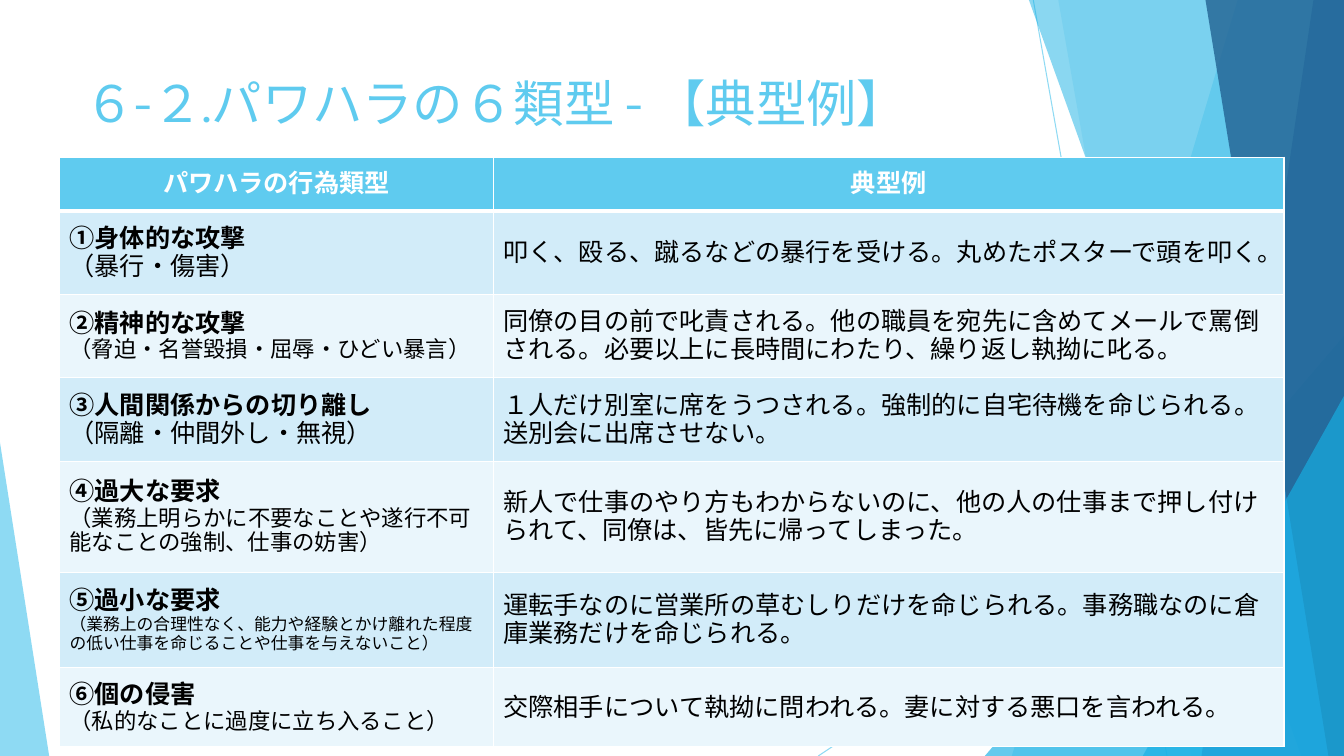
from pptx import Presentation
from pptx.dml.color import RGBColor as RGB
from pptx.enum.shapes import MSO_CONNECTOR as LINK, MSO_SHAPE as KIND
from pptx.enum.text import MSO_ANCHOR as ANCHOR, PP_ALIGN as ALIGN
from pptx.oxml.ns import qn
from pptx.util import Cm, Pt
from lxml.etree import SubElement as Sub

SKY = RGB(0x5F, 0xCB, 0xEF)
AZURE = RGB(0x17, 0xB0, 0xE4)
BLUE = RGB(0x2E, 0x83, 0xC3)
NAVY = RGB(0x22, 0x62, 0x92)
PALE = RGB(0xD2, 0xEC, 0xF9)
MIST = RGB(0xEA, 0xF6, 0xFC)
WHITE = RGB(0xFF, 0xFF, 0xFF)
BLACK = RGB(0, 0, 0)

WIDE, HIGH = 33.87, 19.05
COLS = (10.93, 19.93)
TALL = (1.36, 2.1, 2.1, 2.1, 2.8, 2.41, 1.99)

HEADS = ("パワハラの行為類型", "典型例")
CASES = (
    ("①身体的な攻撃", "（暴行・傷害）", 18,
     "叩く、殴る、蹴るなどの暴行を受ける。丸めたポスターで頭を叩く。"),
    ("②精神的な攻撃", "（脅迫・名誉毀損・屈辱・ひどい暴言）", 16,
     "同僚の目の前で叱責される。他の職員を宛先に含めてメールで罵倒される。必要以上に長時間にわたり、繰り返し執拗に叱る。"),
    ("③人間関係からの切り離し", "（隔離・仲間外し・無視）", 18,
     "１人だけ別室に席をうつされる。強制的に自宅待機を命じられる。送別会に出席させない。"),
    ("④過大な要求", "（業務上明らかに不要なことや遂行不可能なことの強制、仕事の妨害）", 16,
     "新人で仕事のやり方もわからないのに、他の人の仕事まで押し付けられて、同僚は、皆先に帰ってしまった。"),
    ("⑤過小な要求", "（業務上の合理性なく、能力や経験とかけ離れた程度の低い仕事を命じることや仕事を与えないこと）", 12,
     "運転手なのに営業所の草むしりだけを命じられる。事務職なのに倉庫業務だけを命じられる。"),
    ("⑥個の侵害", "（私的なことに過度に立ち入ること）", 16,
     "交際相手について執拗に問われる。妻に対する悪口を言われる。"),
)


def style(font, tint, form):
    for key, value in form.items():
        setattr(font, key, value)
    font.color.rgb = tint


def fade(shape, alpha):
    tint = next(shape._element.spPr.iter(qn("a:srgbClr")))
    Sub(tint, qn("a:alpha"), val=str(alpha * 1000))


def paint(shape, tint, alpha):
    shape.shadow.inherit = False
    shape.fill.solid()
    shape.fill.fore_color.rgb = tint
    shape.line.fill.background()
    fade(shape, alpha)


def line(slide, *ends):
    link = slide.shapes.add_connector(LINK.STRAIGHT, *map(Cm, ends))
    link.line.color.rgb = SKY
    link.line.width = Pt(0.75)
    fade(link, 70)
    Sub(link._element.spPr, qn("a:effectLst"))


def band(slide, top, foot, tint, alpha):
    form = slide.shapes.build_freeform(Cm(top), 0)
    corners = ((WIDE, 0), (WIDE, HIGH), (foot, HIGH))
    form.add_line_segments([(Cm(x), Cm(y)) for x, y in corners])
    paint(form.convert_to_shape(), tint, alpha)


def wedge(slide, left, top, width, peak, tint, alpha):
    box = map(Cm, (left, top, width, HIGH - top))
    shape = slide.shapes.add_shape(KIND.ISOSCELES_TRIANGLE, *box)
    shape.adjustments[0] = peak
    paint(shape, tint, alpha)


def title(slide, text):
    box = slide.shapes.add_textbox(*map(Cm, (1.88, 1.7, 23.88, 3.66)))
    box.text_frame.word_wrap = True
    run = box.text_frame.paragraphs[0].add_run()
    run.text = text
    style(run.font, SKY, {"name": "Karla", "size": Pt(36)})


def edge(spot, foot):
    props = spot._tc.get_or_add_tcPr()
    for side, width in (("L", 1), ("R", 1), ("T", 1), ("B", foot)):
        rim = Sub(props, qn(f"a:ln{side}"), w=str(Pt(width)))
        Sub(Sub(rim, qn("a:solidFill")), qn("a:srgbClr"), val=str(WHITE))


def cell(spot, fill, tint, align, *parts, foot=1):
    edge(spot, foot)
    spot.fill.solid()
    spot.fill.fore_color.rgb = fill
    spot.vertical_anchor = ANCHOR.MIDDLE
    frame = spot.text_frame
    for num, (text, size, bold) in enumerate(parts):
        para = frame.add_paragraph() if num else frame.paragraphs[0]
        para.alignment = align
        run = para.add_run()
        run.text = text
        style(run.font, tint, {"name": "Arial", "size": Pt(size), "bold": bold})
        Sub(run._r.get_or_add_rPr(), qn("a:ea"), typeface="Arial")


def table(slide):
    spot = map(Cm, (1.5, 3.96, sum(COLS), sum(TALL)))
    grid = slide.shapes.add_table(len(TALL), len(COLS), *spot).table
    for col, width in zip(grid.columns, COLS):
        col.width = Cm(width)
    for row, height in zip(grid.rows, TALL):
        row.height = Cm(height)
    for col, head in enumerate(HEADS):
        cell(grid.cell(0, col), SKY, WHITE, ALIGN.CENTER,
             (head, 18, True), foot=3)
    for row, (name, note, size, case) in enumerate(CASES, 1):
        fill = PALE if row % 2 else MIST
        cell(grid.cell(row, 0), fill, BLACK, ALIGN.LEFT,
             (name, 18, True), (note, size, False))
        cell(grid.cell(row, 1), fill, BLACK, ALIGN.LEFT, (case, 18, False))


def main():
    deck = Presentation()
    deck.slide_width, deck.slide_height = Cm(WIDE), Cm(HIGH)
    slide = deck.slides.add_slide(deck.slide_layouts[6])
    line(slide, 26.04, 0, 29.41, HIGH)
    line(slide, WIDE, 10.24, 20.62, HIGH)
    band(slide, 31.19, 25.5, SKY, 36)
    band(slide, 26.67, 30.02, SKY, 20)
    wedge(slide, 24.82, 8.46, 9.05, 1, AZURE, 66)
    band(slide, 25.93, 32.79, AZURE, 50)
    band(slide, 33.1, 30.28, BLUE, 70)
    band(slide, 30.38, 33.48, NAVY, 80)
    wedge(slide, 28.8, 9.98, 5.07, 1, AZURE, 66)
    wedge(slide, 0, 11.15, 1.24, 0, SKY, 70)
    title(slide, "６-２.パワハラの６類型 - 【典型例】")
    table(slide)
    deck.save("out.pptx")


if __name__ == "__main__":
    main()
